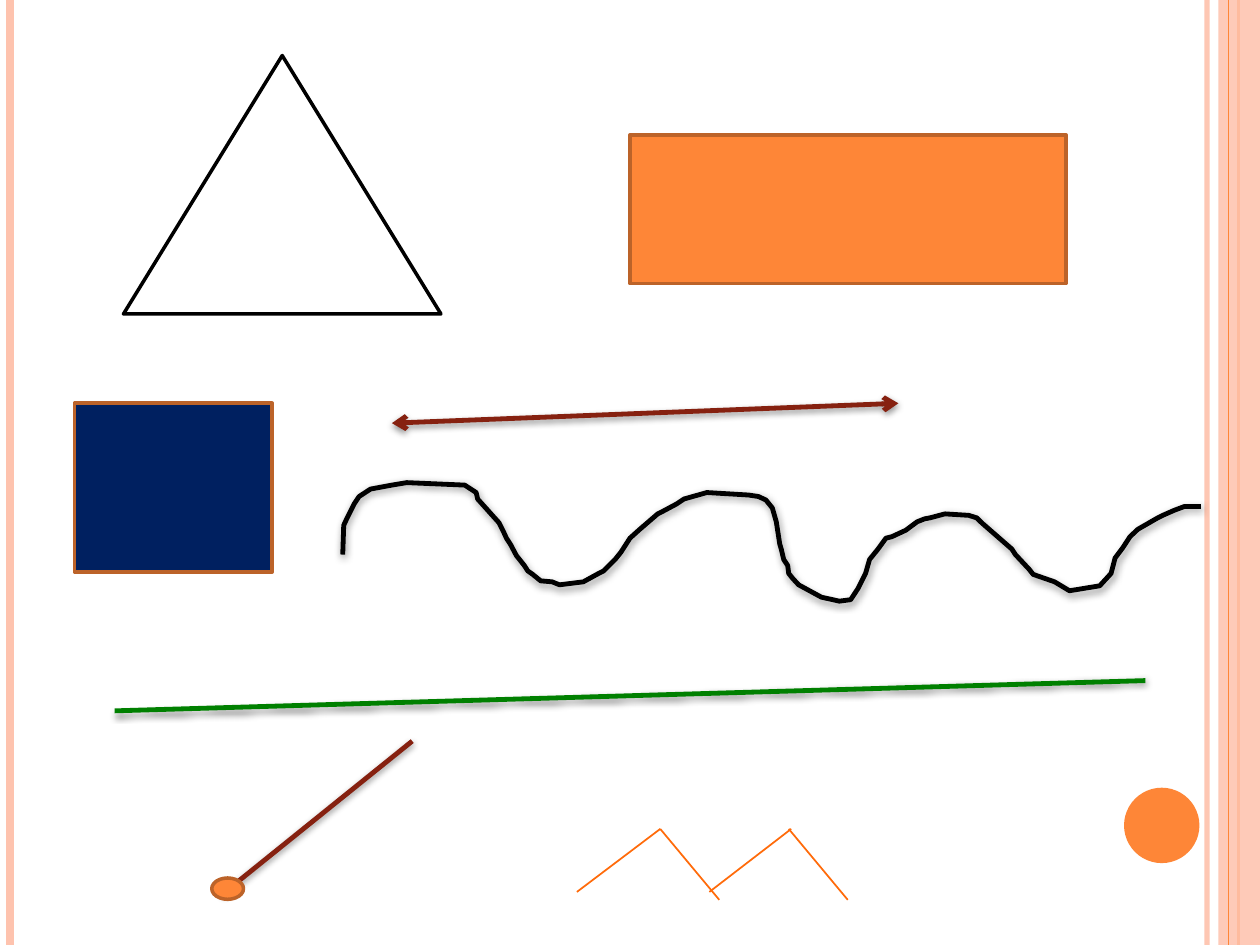
import typing

import lxml.etree
import pptx
import pptx.dml.color
import pptx.enum.shapes
import pptx.oxml.ns
import pptx.util

Cm = pptx.util.Cm
Pt = pptx.util.Pt
Kind = pptx.enum.shapes.MSO_SHAPE
qn = pptx.oxml.ns.qn

ORANGE, PEACH, RUST = "FE8637", "FEC3AE", "BC6329"
MAROON, BLACK = "862110", "000000"
HIGH = 19.05


class Stroke(typing.NamedTuple):
    start: tuple[float, float]
    end: tuple[float, float]
    color: str
    width: float
    alpha: int = 100
    shade: bool = False
    arrows: bool = False


class Form(typing.NamedTuple):
    kind: Kind
    box: tuple[float, float, float, float]
    fill: str
    edge: str | None = None
    alpha: int = 100


def paint(fill, color: str) -> None:
    fill.solid()
    fill.fore_color.rgb = pptx.dml.color.RGBColor.from_string(color)


def add(parent, tag: str, **values):
    node = lxml.etree.SubElement(parent, qn(tag))
    for name, value in values.items():
        node.set(name, str(value))
    return node


def fade(shape, alpha: int) -> None:
    if alpha < 100:
        for color in shape.element.spPr.iter(qn("a:srgbClr")):
            add(color, "a:alpha", val=alpha * 1000)


def effect(shape, shade: bool) -> None:
    """Replace the theme effect by a soft shadow or by none."""
    group = add(shape.element.spPr, "a:effectLst")
    if shade:
        outer = add(group, "a:outerShdw", blurRad=Pt(4), dist=Pt(1.6),
                    dir=90 * 60000, rotWithShape=0)
        color = add(outer, "a:srgbClr", val=BLACK)
        add(color, "a:alpha", val=42000)


def edge(shape, color: str, width: float) -> None:
    paint(shape.line.fill, color)
    shape.line.width = Pt(width)


def draw_line(slide, item: Stroke) -> None:
    ends = [Cm(n) for n in item.start + item.end]
    line = slide.shapes.add_connector(
        pptx.enum.shapes.MSO_CONNECTOR.STRAIGHT, *ends)
    edge(line, item.color, item.width)
    fade(line, item.alpha)
    if item.arrows:
        for tag in ("a:headEnd", "a:tailEnd"):
            add(line.element.spPr.find(qn("a:ln")), tag, type="arrow")
    effect(line, item.shade)


def draw_form(slide, item: Form) -> None:
    shape = slide.shapes.add_shape(item.kind, *[Cm(n) for n in item.box])
    paint(shape.fill, item.fill)
    fade(shape, item.alpha)
    if item.edge:
        edge(shape, item.edge, 2)
    else:
        shape.line.fill.background()
    effect(shape, False)


def draw_wave(slide, points: list[tuple[float, float]]) -> None:
    spots = [(Cm(x), Cm(y)) for x, y in points]
    build = slide.shapes.build_freeform(*spots[0])
    build.add_line_segments(spots[1:], close=False)
    wave = build.convert_to_shape()
    wave.fill.background()
    edge(wave, BLACK, 2.75)
    effect(wave, True)


def rule(x: float, color: str, width: float, alpha: int = 100) -> Stroke:
    return Stroke((x, 0), (x, HIGH), color, width, alpha)


# Side bands of the page
FRAME = [
    rule(24.33, PEACH, 3, 93),
    rule(0.2, PEACH, 4.5),
    rule(24.97, ORANGE, 1.5),
    Form(Kind.RECTANGLE, (24.56, 0, 0.84, HIGH), PEACH, alpha=87),
    rule(24.77, ORANGE, 0.75),
    Form(Kind.OVAL, (22.66, 15.88, 1.52, 1.52), ORANGE),
]

# Figures and long lines
FIGURES = [
    Form(Kind.ISOSCELES_TRIANGLE, (2.49, 1.12, 6.4, 5.21), "FFFFFF", BLACK),
    Form(Kind.RECTANGLE, (12.7, 2.72, 8.79, 3), ORANGE, RUST),
    Form(Kind.RECTANGLE, (1.5, 8.13, 3.99, 3.4), "002060", RUST),
    Stroke((2.31, 14.33), (20.78 + 2.31, 13.72), "008000", 2.75, shade=True),
    Stroke((7.9, 8.53), (18.11, 8.13), MAROON, 2.75, shade=True, arrows=True),
]

# Stick with a round foot
STICK = [
    Stroke((4.5, 18.01), (8.31, 14.94), MAROON, 2.75, shade=True),
    Form(Kind.OVAL, (4.27, 17.7, 0.64, 0.43), ORANGE, RUST),
]

# Zigzag: two rising and two falling strokes
TOP, FOOT, DROP = 16.71, 17.98, 18.14
ZIGZAG = [
    Stroke((left, low), (right, high), "FF6B0A", 1)
    for left, low, right, high in (
        (11.63, FOOT, 13.31, TOP), (14.3, FOOT, 15.95, TOP),
        (13.31, TOP, 14.5, DROP), (15.9, TOP, 17.09, DROP))
]

WAVE = [
    (6.91, 11.18), (6.93, 10.59), (6.99, 10.46), (7.14, 10.16),
    (7.24, 10.01), (7.47, 9.86), (7.9, 9.78), (8.2, 9.73), (9.37, 9.78),
    (9.6, 9.93), (9.63, 10.06), (10.06, 10.54), (10.16, 10.74),
    (10.21, 10.85), (10.29, 10.97), (10.41, 11.2), (10.57, 11.4),
    (10.64, 11.51), (10.74, 11.58), (10.9, 11.71), (11.13, 11.73),
    (11.28, 11.79), (11.76, 11.73), (12.07, 11.56), (12.17, 11.51),
    (12.4, 11.28), (12.52, 11.13), (12.7, 10.85), (12.9, 10.67),
    (13.26, 10.36), (13.36, 10.31), (13.64, 10.16), (13.79, 10.06),
    (14.25, 9.93), (15.09, 9.98), (15.29, 10.01), (15.44, 10.08),
    (15.57, 10.24), (15.65, 10.52), (15.72, 10.97), (15.75, 11.07),
    (15.8, 11.28), (15.88, 11.4), (15.9, 11.56), (15.98, 11.66),
    (16.1, 11.79), (16.56, 12.04), (16.79, 12.09), (16.92, 12.12),
    (17.15, 12.09), (17.3, 11.86), (17.45, 11.56), (17.53, 11.28),
    (17.7, 11.07), (17.86, 10.85), (17.98, 10.82), (18.26, 10.69),
    (18.49, 10.52), (18.64, 10.46), (18.75, 10.44), (19.05, 10.36),
    (19.53, 10.39), (19.69, 10.44), (19.79, 10.54), (20.4, 11.07),
    (20.47, 11.18), (20.75, 11.48), (20.83, 11.58), (21.26, 11.73),
    (21.56, 11.91), (22.17, 11.81), (22.4, 11.56), (22.48, 11.25),
    (22.63, 11.05), (22.78, 10.82), (22.94, 10.67), (23.34, 10.44),
    (23.44, 10.39), (23.67, 10.29), (23.88, 10.21), (24.21, 10.21),
]


def draw_all(slide, items: list[Stroke | Form]) -> None:
    for item in items:
        if isinstance(item, Stroke):
            draw_line(slide, item)
        else:
            draw_form(slide, item)


def main() -> None:
    deck = pptx.Presentation()
    deck.slide_width, deck.slide_height = Cm(25.4), Cm(HIGH)
    slide = deck.slides.add_slide(deck.slide_layouts[6])
    draw_all(slide, FRAME + FIGURES)
    draw_wave(slide, WAVE)
    draw_all(slide, STICK + ZIGZAG)
    deck.save("out.pptx")


if __name__ == "__main__":
    main()
